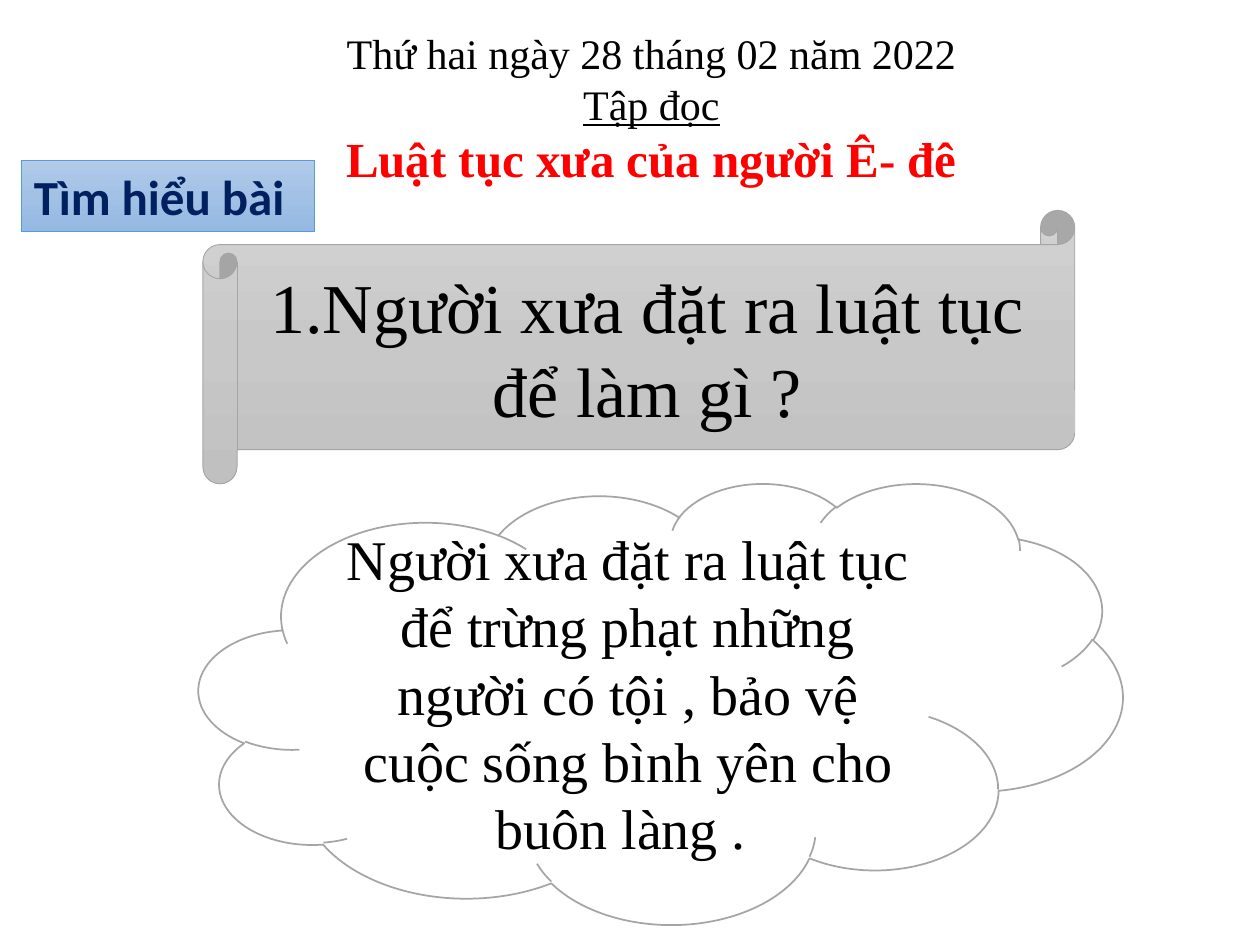
from copy import deepcopy

from pptx import Presentation
from pptx import util as u
from pptx.dml.color import RGBColor
from pptx.enum import shapes, text
from pptx.oxml.ns import qn

SERIF = "Times New Roman"
CENTER = text.PP_ALIGN.CENTER


def color(value):
    return RGBColor.from_string(value)


def inches(box):
    return [u.Inches(v) for v in box]


def add_run(p, words, hex_color="000000", **formats):
    r = p.add_run()
    r.text = words
    for name, value in formats.items():
        setattr(r.font, name, value)
    r.font.color.rgb = color(hex_color)


def fill_shape(sp, colors):
    if len(colors) == 1:
        sp.fill.solid()
        sp.fill.fore_color.rgb = color(colors[0])
        return
    sp.fill.gradient()
    sp.fill.gradient_angle = 270
    stops = sp._element.spPr.find(qn("a:gradFill")).find(qn("a:gsLst"))
    stops.insert(1, deepcopy(stops[0]))
    for i, (stop, value) in enumerate(zip(sp.fill.gradient_stops, colors)):
        stop.position = i / 2
        stop.color.rgb = color(value)


def add_panel(s, box, kind, colors, line, width, words, align, anchor, **formats):
    sp = s.shapes.add_shape(kind, *inches(box))
    sp.shadow.inherit = False
    fill_shape(sp, colors)
    sp.line.color.rgb = color(line)
    sp.line.width = u.Pt(width)
    tf = sp.text_frame
    tf.word_wrap = True
    tf.vertical_anchor = anchor
    p = tf.paragraphs[0]
    p.alignment = align
    add_run(p, words, **formats)
    return sp


def add_heading(s, box):
    sp = s.shapes.title
    sp.left, sp.top, sp.width, sp.height = inches(box)
    tf = sp.text_frame
    tf.word_wrap = True
    tf.auto_size = text.MSO_AUTO_SIZE.NONE
    tf.vertical_anchor = text.MSO_ANCHOR.TOP
    p = tf.paragraphs[0]
    p.alignment = CENTER
    add_run(p, "Thứ hai ngày 28 tháng 02 năm 2022", name=SERIF, size=u.Pt(24))
    p.add_line_break()
    add_run(p, "Tập đọc", name=SERIF, size=u.Pt(24), underline=True)
    p = tf.add_paragraph()
    p.alignment = CENTER
    add_run(p, "Luật tục xưa của người Ê- đê", "FF0000",
            name=SERIF, size=u.Pt(28), bold=True)


def add_answer(s, box):
    add_panel(s, box, shapes.MSO_SHAPE.CLOUD, ["FFFFFF"], "A5A5A5", 1,
              "Người xưa đặt ra luật tục để trừng phạt những người có tội , "
              "bảo vệ cuộc sống bình yên cho buôn làng . ",
              CENTER, text.MSO_ANCHOR.MIDDLE, name=SERIF, size=u.Pt(32))


def add_question(s, box):
    add_panel(s, box, shapes.MSO_SHAPE.HORIZONTAL_SCROLL,
              ["D2D2D2", "C8C8C8", "C0C0C0"], "A5A5A5", 0.5,
              "1.Người xưa đặt ra luật tục để làm gì ?",
              CENTER, text.MSO_ANCHOR.MIDDLE, name=SERIF, size=u.Pt(40))


def add_section_label(s, box):
    sp = add_panel(s, box, shapes.MSO_SHAPE.RECTANGLE,
                   ["B1CBE9", "A3C1E5", "93B9E4"], "5B9BD5", 0.5,
                   "Tìm hiểu bài", text.PP_ALIGN.LEFT, text.MSO_ANCHOR.TOP,
                   hex_color="002060", name="Calibri", size=u.Pt(28), bold=True)
    sp.text_frame.auto_size = text.MSO_AUTO_SIZE.SHAPE_TO_FIT_TEXT


def main():
    prs = Presentation()
    prs.slide_width, prs.slide_height = u.Inches(10), u.Inches(7.5)
    s = prs.slides.add_slide(prs.slide_layouts[5])
    add_answer(s, (1.58, 3.83, 7.33, 3.5))
    add_question(s, (1.61, 1.67, 6.92, 2.17))
    add_heading(s, (0.67, 0.17, 9, 0.83))
    add_section_label(s, (0.17, 1.27, 2.33, 0.57))
    prs.save("out.pptx")


if __name__ == "__main__":
    main()
